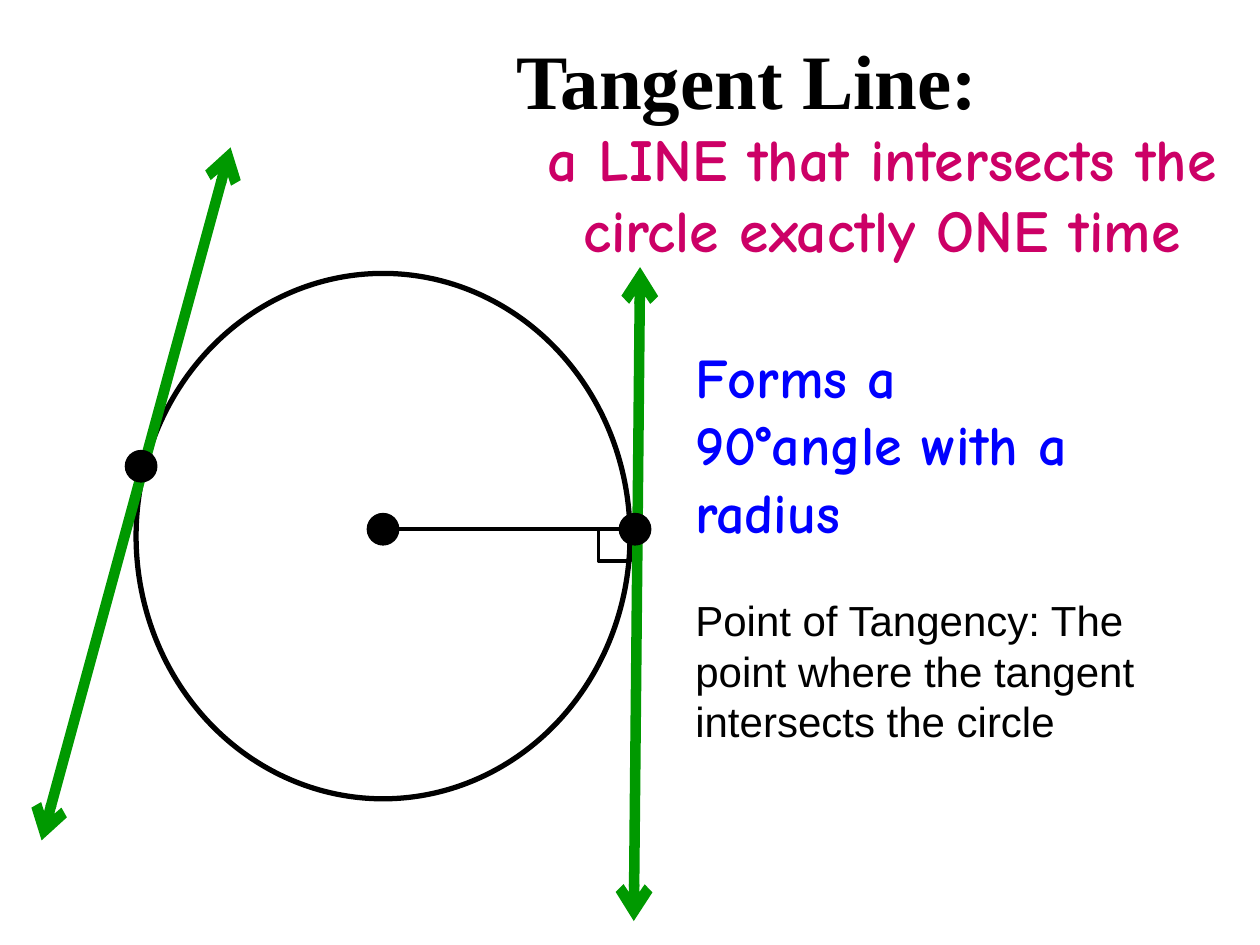
from lxml import etree
from pptx import Presentation
from pptx.dml.color import RGBColor
from pptx.enum.shapes import MSO_CONNECTOR, MSO_SHAPE
from pptx.enum.text import MSO_ANCHOR, PP_ALIGN
from pptx.oxml.ns import qn
from pptx.util import Inches, Pt

LINE = MSO_CONNECTOR.STRAIGHT
OVAL, RECT = MSO_SHAPE.OVAL, MSO_SHAPE.RECTANGLE
TOP, MID = MSO_ANCHOR.TOP, MSO_ANCHOR.MIDDLE
LEFT, CENTER = PP_ALIGN.LEFT, PP_ALIGN.CENTER

WIDE, HIGH = 10, 7.5
DOT = 0.25
COLORS = {"ink": "000000", "green": "009900", "pink": "CC0066", "blue": "0000FF"}


def color(name):
    return RGBColor.from_string(COLORS[name])


def add_text(slide, text, box, font="Arial", size=24, hue="ink", bold=False,
             align=LEFT, anchor=TOP):
    frame = slide.shapes.add_textbox(*map(Inches, box)).text_frame
    frame.word_wrap = True
    frame.vertical_anchor = anchor
    part = frame.paragraphs[0]
    part.alignment = align
    run = part.add_run()
    run.text = text
    run.font.name = font
    run.font.size = Pt(size)
    run.font.bold = bold
    run.font.color.rgb = color(hue)


def add_form(slide, kind, box, width, fill=None):
    form = slide.shapes.add_shape(kind, *map(Inches, box))
    form.shadow.inherit = False
    form.line.color.rgb = color("ink")
    form.line.width = Pt(width)
    if fill:
        form.fill.solid()
        form.fill.fore_color.rgb = color(fill)
    else:
        form.fill.background()


def add_dot(slide, x, y):
    add_form(slide, OVAL, (x - DOT / 2, y - DOT / 2, DOT, DOT), 0.75, "ink")


def add_line(slide, start, end, width, hue="ink", arrows=False):
    line = slide.shapes.add_connector(LINE, *map(Inches, start + end))
    line.line.color.rgb = color(hue)
    line.line.width = Pt(width)
    if arrows:
        for tag in ("a:headEnd", "a:tailEnd"):
            etree.SubElement(line.line._get_or_add_ln(), qn(tag), type="arrow")
    etree.SubElement(line._element.spPr, qn("a:effectLst"))


def add_tangent(slide, start, end):
    add_line(slide, start, end, 6, "green", arrows=True)


def main():
    deck = Presentation()
    deck.slide_width, deck.slide_height = Inches(WIDE), Inches(HIGH)
    slide = deck.slides.add_slide(deck.slide_layouts[6])
    left, right = 0.4 * WIDE, 0.542 * WIDE

    add_form(slide, OVAL, (1.08, 2.17, 3.92, 4.17), 3)
    add_tangent(slide, (1.83, 1.17), (0.33, 6.67))
    add_tangent(slide, (5.08, 2.12), (5.03, 7.31))
    for x, y in ((3.04, 4.2), (1.12, 3.7), (5.04, 4.2)):
        add_dot(slide, x, y)
    add_line(slide, (3.08, 4.2), (5, 4.2), 2.25)
    add_form(slide, RECT, (4.75, 4.2, DOT, DOT), 2.25)

    add_text(slide, "Tangent Line:", (left, 0.25, 5.67, 0.75),
             font="Times New Roman", size=44, bold=True, anchor=MID)
    add_text(slide, "a LINE that intersects the circle exactly ONE time",
             (left, 0.92, 6, 1.8), font="Comic Neue", size=34, hue="pink",
             bold=True, align=CENTER)
    add_text(slide, "Forms a 90°angle with a radius", (right, 2.67, 3.17, 1.72),
             font="Comic Neue", size=32, hue="blue", bold=True)
    add_text(slide, "Point of Tangency: The point where the tangent intersects the circle",
             (right, 4.67, 4.08, 1.72))
    deck.save("out.pptx")


if __name__ == "__main__":
    main()
